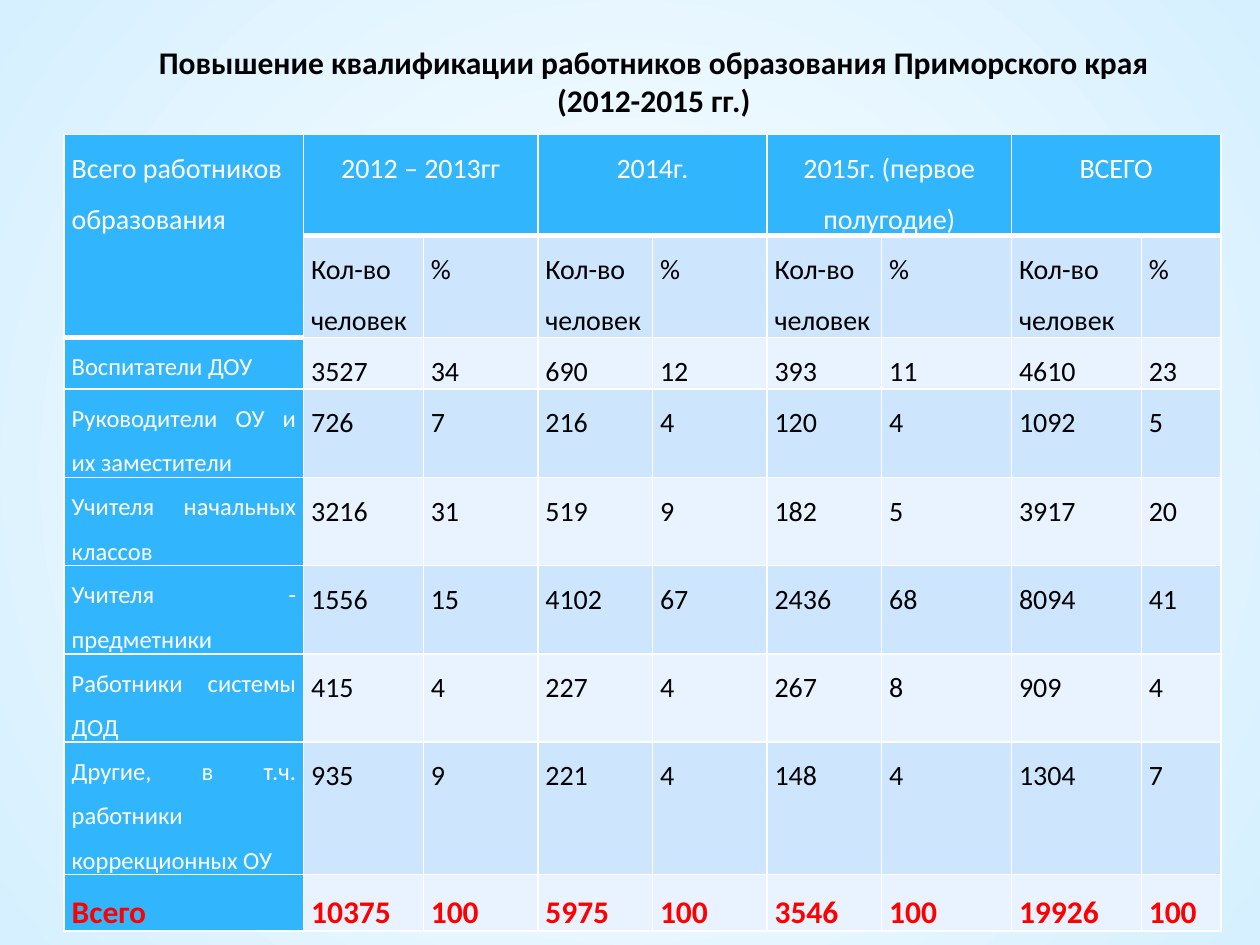
from lxml import etree
from pptx import Presentation
from pptx.dml.color import RGBColor
from pptx.enum.text import MSO_ANCHOR, MSO_AUTO_SIZE, PP_ALIGN
from pptx.oxml.ns import qn
from pptx.util import Pt

TOP = MSO_ANCHOR.TOP
GROW = MSO_AUTO_SIZE.SHAPE_TO_FIT_TEXT
LEFT, CENTER, JUSTIFY = PP_ALIGN.LEFT, PP_ALIGN.CENTER, PP_ALIGN.JUSTIFY

FONT = "Calibri"
WHITE, BLACK, RED = "FFFFFF", "000000", "FF0000"
SKY, HEADER, BAND, PALE = "D6F0FF", "31B6FD", "CEE5FE", "E8F3FF"

TITLE = "Повышение квалификации работников образования Приморского края (2012-2015 гг.)"
CORNER = "Всего работников образования"
PERIODS = ["2012 – 2013гг", "2014г.", "2015г. (первое полугодие)", "ВСЕГО"]
MEASURES = ["Кол-во человек", "%"]
STAFF = [
    ("Воспитатели ДОУ", 3527, 34, 690, 12, 393, 11, 4610, 23),
    ("Руководители ОУ и их заместители", 726, 7, 216, 4, 120, 4, 1092, 5),
    ("Учителя начальных классов", 3216, 31, 519, 9, 182, 5, 3917, 20),
    ("Учителя - предметники", 1556, 15, 4102, 67, 2436, 68, 8094, 41),
    ("Работники системы ДОД", 415, 4, 227, 4, 267, 8, 909, 4),
    ("Другие, в т.ч. работники коррекционных ОУ", 935, 9, 221, 4, 148, 4, 1304, 7),
]
TOTAL = ("Всего", 10375, 100, 5975, 100, 3546, 100, 19926, 100)

COL_WIDTHS = [136.8, 68.4, 65.5, 65.5, 65.5, 65.5, 74.2, 74.2, 45.4]
ROW_HEIGHTS = [50.4, 58.3, 29.5, 48.2, 43.2, 23.8, 48.2, 71.3, 23.8]


def rgb(value):
    return RGBColor.from_string(value)


def format_paragraph(p, size, color, align, bold=False):
    p.alignment = align
    p.font.name = FONT
    p.font.size = Pt(size)
    p.font.bold = bold
    p.font.color.rgb = rgb(color)


def set_borders(cell, bottom):
    tcPr = cell._tc.get_or_add_tcPr()
    widths = {"a:lnL": 1, "a:lnR": 1, "a:lnT": 1, "a:lnB": bottom}
    for i, (tag, width) in enumerate(widths.items()):
        ln = etree.Element(qn(tag), w=str(Pt(width)))
        fill = etree.SubElement(ln, qn("a:solidFill"))
        etree.SubElement(fill, qn("a:srgbClr"), val=WHITE)
        tcPr.insert(i, ln)


def style_cell(cell, fill, bottom=1):
    cell.fill.solid()
    cell.fill.fore_color.rgb = rgb(fill)
    cell.margin_left = cell.margin_right = Pt(4.3)
    cell.margin_top = cell.margin_bottom = 0
    set_borders(cell, bottom)


def write_cell(cell, text, size, color, align, bold=False):
    p = cell.text_frame.paragraphs[0]
    p.text = str(text)
    p.line_spacing = 1.5
    format_paragraph(p, size, color, align, bold)


def add_background(s):
    fill = s.background.fill
    fill.gradient()
    for stop, color in zip(fill.gradient_stops, (WHITE, SKY)):
        stop.color.rgb = rgb(color)
    grad = s.element.find(".//" + qn("a:gradFill"))
    grad.remove(grad.find(qn("a:lin")))
    circle = etree.SubElement(grad, qn("a:path"), path="circle")
    etree.SubElement(circle, qn("a:fillToRect"), l="50000", t="50000", r="50000", b="50000")


def add_title(s, x, y, w, h):
    sp = s.shapes.title
    sp.left, sp.top, sp.width, sp.height = Pt(x), Pt(y), Pt(w), Pt(h)
    tf = sp.text_frame
    tf.word_wrap = True
    tf.auto_size = GROW
    tf.vertical_anchor = TOP
    tf.text = TITLE
    format_paragraph(tf.paragraphs[0], 18, BLACK, CENTER, True)


def fill_header(table):
    write_cell(table.cell(0, 0), CORNER, 16, WHITE, LEFT)
    for i, period in enumerate(PERIODS):
        col = 1 + 2 * i
        write_cell(table.cell(0, col), period, 16, WHITE, CENTER)
        for j, measure in enumerate(MEASURES):
            write_cell(table.cell(1, col + j), measure, 16, BLACK, JUSTIFY)
        table.cell(0, col).merge(table.cell(0, col + 1))
    table.cell(0, 0).merge(table.cell(1, 0))


def fill_body(table):
    for row, (label, *values) in enumerate(STAFF, 2):
        write_cell(table.cell(row, 0), label, 14, WHITE, JUSTIFY)
        for col, value in enumerate(values, 1):
            write_cell(table.cell(row, col), value, 16, BLACK, JUSTIFY)
    for col, value in enumerate(TOTAL):
        align = JUSTIFY if col else LEFT
        write_cell(table.cell(len(STAFF) + 2, col), value, 18, RED, align, True)


def add_staff_table(s, x, y, w, h):
    rows, cols = len(ROW_HEIGHTS), len(COL_WIDTHS)
    table = s.shapes.add_table(rows, cols, Pt(x), Pt(y), Pt(w), Pt(h)).table
    table.first_row = table.horz_banding = False
    for column, width in zip(table.columns, COL_WIDTHS):
        column.width = Pt(width)
    for row, height in zip(table.rows, ROW_HEIGHTS):
        row.height = Pt(height)
    for row in range(rows):
        for col in range(cols):
            body_fill = BAND if row % 2 else PALE
            fill = HEADER if row == 0 or col == 0 else body_fill
            style_cell(table.cell(row, col), fill, 3 if row == 0 else 1)
    fill_header(table)
    fill_body(table)


def main():
    prs = Presentation()
    prs.slide_width, prs.slide_height = Pt(720), Pt(540)
    s = prs.slides.add_slide(prs.slide_layouts[5])
    add_background(s)
    add_title(s, 67.7, 20.9, 612, 72.7)
    add_staff_table(s, 36.7, 77, 663.1, 455)
    prs.save("out.pptx")


if __name__ == "__main__":
    main()
